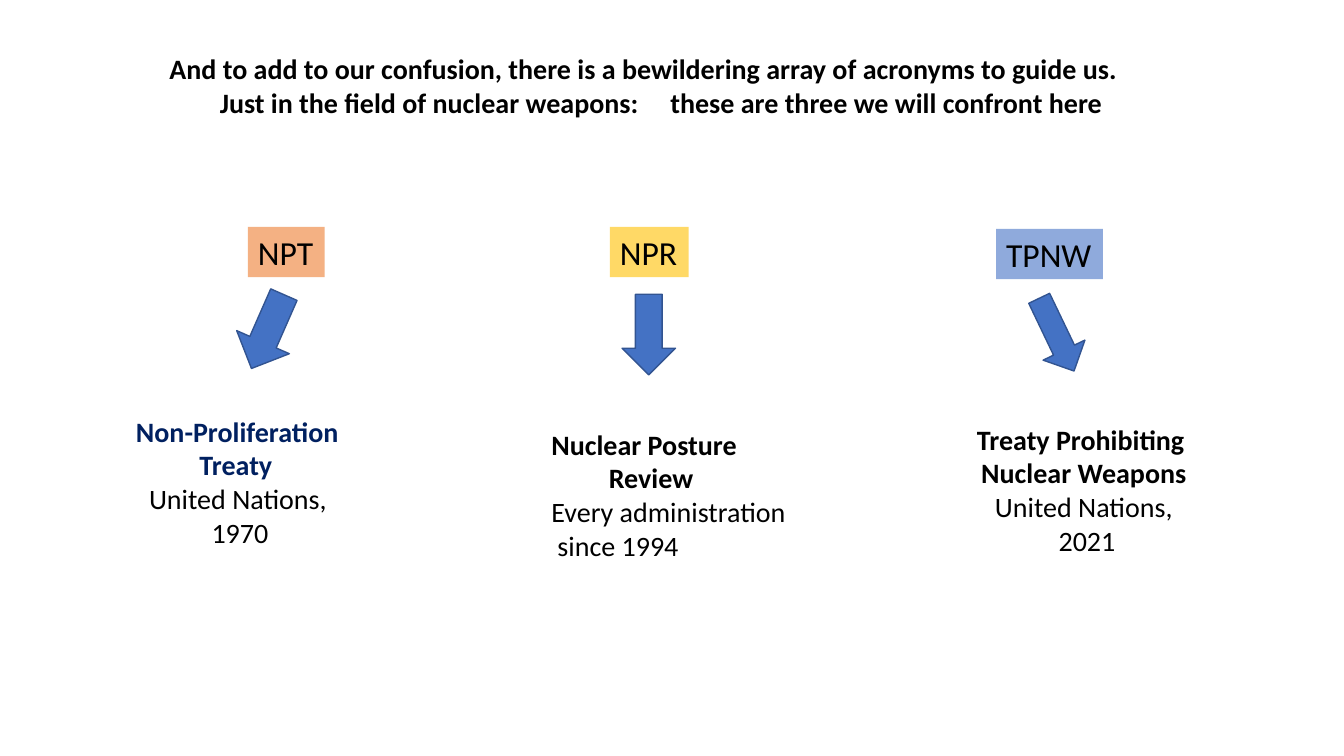
from pptx import Presentation
from pptx.dml.color import RGBColor
from pptx.enum.shapes import MSO_SHAPE
from pptx.enum.text import MSO_ANCHOR, MSO_AUTO_SIZE, PP_ALIGN
from pptx.util import Inches, Pt

BLACK = RGBColor(0x00, 0x00, 0x00)
NAVY = RGBColor(0x00, 0x20, 0x60)
BLUE = RGBColor(0x44, 0x72, 0xC4)
EDGE = RGBColor(0x32, 0x54, 0x91)
ORANGE = RGBColor(0xF4, 0xB1, 0x83)
YELLOW = RGBColor(0xFF, 0xD9, 0x66)
SKY = RGBColor(0x8F, 0xAA, 0xDC)

LEFT, CENTER = PP_ALIGN.LEFT, PP_ALIGN.CENTER

# Each column: tag, arrow and detail boxes, then lines as (text, indent)
COLUMNS = [
    dict(tag="NPT", fill=ORANGE, tag_box=(2.46, 2.25, 0.76, 0.5),
         arrow_box=(2.37, 2.89, 0.57, 0.8), turn=23.7,
         text_box=(1.25, 4.06, 2.46, 1.45), head=NAVY, align=LEFT,
         lines=[("Non-Proliferation", 0), ("Treaty", 0.63),
                ("United Nations,", 0.13), ("1970", 0.75)]),
    dict(tag="NPR", fill=YELLOW, tag_box=(6.05, 2.25, 0.78, 0.5),
         arrow_box=(6.17, 2.92, 0.53, 0.8), turn=0,
         text_box=(5.37, 4.19, 2.62, 1.45), head=BLACK, align=LEFT,
         lines=[("Nuclear Posture", 0), ("Review", 0.57),
                ("Every administration", 0), ("since 1994", 0.06)]),
    dict(tag="TPNW", fill=SKY, tag_box=(9.88, 2.27, 1.06, 0.5),
         arrow_box=(10.25, 2.92, 0.46, 0.8), turn=334.4,
         text_box=(9.58, 4.14, 2.34, 1.45), head=BLACK, align=CENTER,
         lines=[("Treaty Prohibiting ", 0), ("Nuclear Weapons", 0),
                ("United Nations,", 0), (" 2021", 0)]),
]


def inches(box):
    return [Inches(side) for side in box]


def style(para, size, color=BLACK, bold=False, align=LEFT, indent=0):
    font = para.font
    font.name, font.size, font.bold = "Calibri", Pt(size), bold
    font.color.rgb = color
    para.alignment = align
    para.line_spacing = 1.0
    para.space_before = Pt(0)
    props = para._p.get_or_add_pPr()
    props.set("marL", str(Inches(indent)))
    props.set("indent", "0")


def add_title(slide, box):
    title = slide.shapes.title
    title.left, title.top, title.width, title.height = inches(box)
    frame = title.text_frame
    frame.word_wrap = True
    frame.auto_size = MSO_AUTO_SIZE.NONE
    frame.vertical_anchor = MSO_ANCHOR.TOP
    first = frame.paragraphs[0]
    first.text = ("And to add to our confusion, there is a bewildering "
                  "array of acronyms to guide us.")
    second = frame.add_paragraph()
    second.add_run().text = "Just in the field of nuclear weapons:"
    gap = second.add_run()
    gap.text = " "
    gap.font._element.set("spc", "1800")  # wide gap between the halves
    second.add_run().text = "these are three we will confront here"
    style(first, 20, bold=True)
    style(second, 20, bold=True, indent=0.5)


def add_tag(slide, box, text, fill):
    tag = slide.shapes.add_textbox(*inches(box))
    tag.fill.solid()
    tag.fill.fore_color.rgb = fill
    tag.text_frame.word_wrap = False
    para = tag.text_frame.paragraphs[0]
    para.text = text
    style(para, 24)


def add_arrow(slide, box, turn):
    arrow = slide.shapes.add_shape(MSO_SHAPE.DOWN_ARROW, *inches(box))
    arrow.rotation = turn
    arrow.shadow.inherit = False
    arrow.fill.solid()
    arrow.fill.fore_color.rgb = BLUE
    arrow.line.color.rgb = EDGE
    arrow.line.width = Pt(1)


def add_detail(slide, box, lines, head, align):
    frame = slide.shapes.add_textbox(*inches(box)).text_frame
    frame.word_wrap = True
    for row, (text, indent) in enumerate(lines):
        para = frame.add_paragraph() if row else frame.paragraphs[0]
        para.text = text
        bold = row < 2  # the name takes two lines
        style(para, 20, head if bold else BLACK, bold, align, indent)


def add_column(slide, col):
    add_tag(slide, col["tag_box"], col["tag"], col["fill"])
    add_arrow(slide, col["arrow_box"], col["turn"])
    add_detail(slide, col["text_box"], col["lines"], col["head"], col["align"])


def main():
    deck = Presentation()
    deck.slide_width, deck.slide_height = Inches(13.33), Inches(7.5)
    slide = deck.slides.add_slide(deck.slide_layouts[5])
    add_title(slide, (1.58, 0.46, 10.03, 0.77))
    for col in COLUMNS:
        add_column(slide, col)
    deck.save("out.pptx")


if __name__ == "__main__":
    main()
